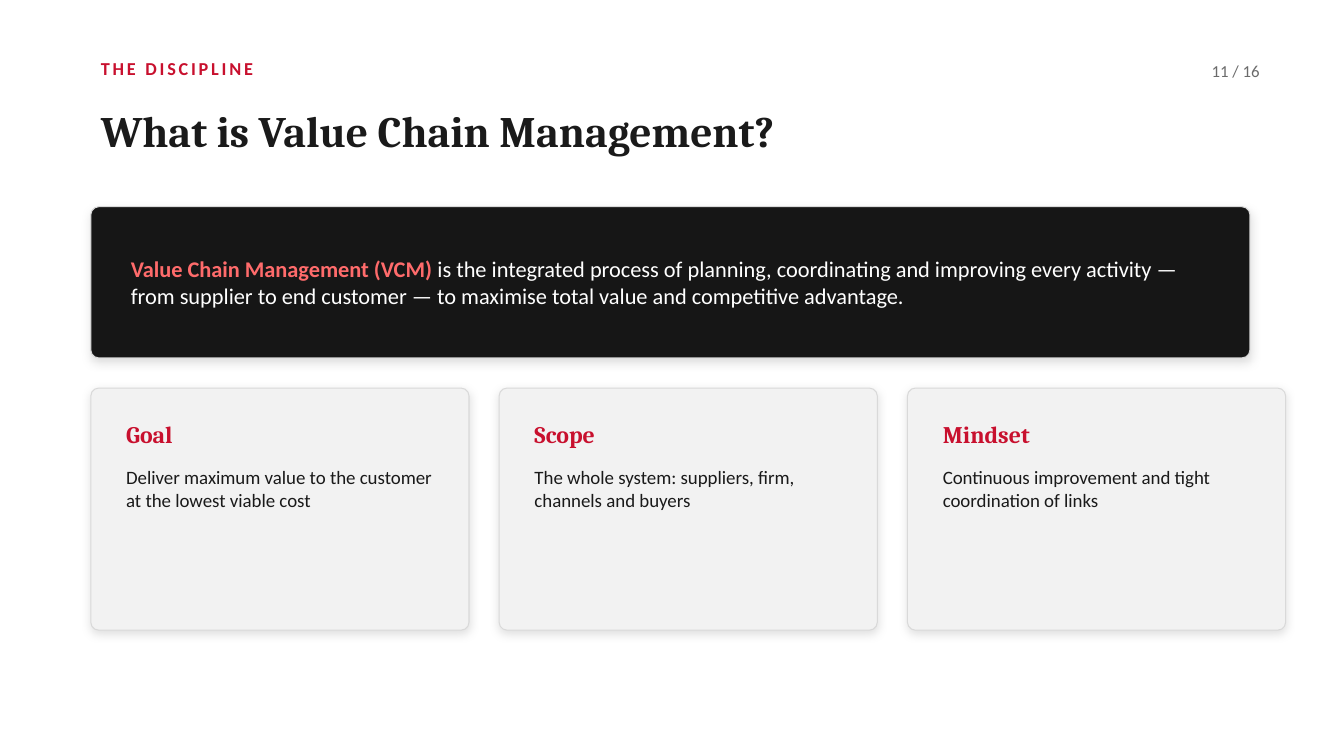
from lxml import etree
from pptx import Presentation
from pptx import util as u
from pptx.dml.color import RGBColor
from pptx.enum import shapes, text
from pptx.oxml import ns

RED = RGBColor(0xC8, 0x10, 0x2E)
CORAL = RGBColor(0xFF, 0x6B, 0x6B)
INK = RGBColor(0x1A, 0x1A, 0x1A)
GREY = RGBColor(0x6B, 0x6B, 0x6B)
BLACK = RGBColor(0x16, 0x16, 0x16)
PALE = RGBColor(0xF2, 0xF2, 0xF2)
BORDER = RGBColor(0xD9, 0xD9, 0xD9)
WHITE = RGBColor(0xFF, 0xFF, 0xFF)
SHADE = RGBColor(0, 0, 0)

MARGIN = 2.29
CARD_TOP = 9.78
CARD_WIDTH = 9.53
CARD_PITCH = 10.29
CARD_INSET = 0.64
CARDS = [
    ("Goal", "Deliver maximum value to the customer at the lowest viable cost"),
    ("Scope", "The whole system: suppliers, firm, channels and buyers"),
    ("Mindset", "Continuous improvement and tight coordination of links"),
]


def set_font(font, name, size, color, bold=False):
    """Apply a typeface, size, colour and weight."""
    font.name = name
    font.size = u.Pt(size)
    font.bold = bold
    font.color.rgb = color


def prepare_frame(box, anchor=text.MSO_ANCHOR.MIDDLE):
    """Set wrapping and anchoring, and return the first paragraph."""
    frame = box.text_frame
    frame.word_wrap = True
    frame.auto_size = text.MSO_AUTO_SIZE.NONE
    frame.vertical_anchor = anchor
    para = frame.paragraphs[0]
    para.alignment = text.PP_ALIGN.LEFT
    return para


def add_text(page, place, words, name, size, color, bold=False,
             anchor=text.MSO_ANCHOR.MIDDLE):
    """Add a one-paragraph text box and return its paragraph."""
    box = page.shapes.add_textbox(*map(u.Cm, place))
    para = prepare_frame(box, anchor)
    para.text = words
    set_font(para.font, name, size, color, bold)
    return para


def add_shadow(shape):
    """Give a shape a soft shadow that falls straight down."""
    shape.shadow.inherit = False
    effects = shape.element.spPr.find(ns.qn("a:effectLst"))
    shadow = etree.SubElement(
        effects, ns.qn("a:outerShdw"), blurRad=str(u.Pt(7)),
        dist=str(u.Pt(2)), dir="5400000", algn="t", rotWithShape="0")
    color = etree.SubElement(shadow, ns.qn("a:srgbClr"), val=str(SHADE))
    etree.SubElement(color, ns.qn("a:alpha"), val="12000")


def add_panel(page, place, fill):
    """Add a rounded panel with a thin border, all with the same corner radius."""
    panel = page.shapes.add_shape(
        shapes.MSO_SHAPE.ROUNDED_RECTANGLE, *map(u.Cm, place))
    panel.adjustments[0] = 0.2 / place[3]
    panel.fill.solid()
    panel.fill.fore_color.rgb = fill
    panel.line.color.rgb = BORDER
    panel.line.width = u.Pt(0.75)
    add_shadow(panel)


def add_header(page):
    """Add the section label, title and page count."""
    label = add_text(page, (MARGIN, 1.22, 22.86, 1.02), "THE DISCIPLINE",
                     "Calibri", 13, RED, True)
    label.runs[0].font._element.set("spc", "200")
    title = page.shapes.title
    title.left, title.top, title.width, title.height = map(
        u.Cm, (MARGIN, 2.08, 29.21, 2.41))
    para = prepare_frame(title)
    para.text = "What is Value Chain Management?"
    set_font(para.font, "Cambria", 31, INK, True)
    count = add_text(page, (29.46, 1.27, 2.54, 1.02), "11 / 16",
                     "Calibri", 12, GREY)
    count.alignment = text.PP_ALIGN.RIGHT


def add_definition(page):
    """Add the dark panel with the definition."""
    add_panel(page, (MARGIN, 5.21, 29.21, 3.81), BLACK)
    para = add_text(page, (3.05, 5.72, 27.94, 2.79),
                    "Value Chain Management (VCM) ", "Calibri", 16, WHITE)
    set_font(para.runs[0].font, "Calibri", 16, CORAL, True)
    span = para.add_run()
    span.text = ("is the integrated process of planning, coordinating and "
                 "improving every activity — from supplier to end customer — "
                 "to maximise total value and competitive advantage.")
    set_font(span.font, "Calibri", 16, WHITE)


def add_card(page, left, heading, words):
    """Add a pale card with a heading and a short text."""
    add_panel(page, (left, CARD_TOP, CARD_WIDTH, 6.1), PALE)
    inner = left + CARD_INSET
    width = CARD_WIDTH - 2 * CARD_INSET
    add_text(page, (inner, CARD_TOP + 0.51, width, 1.27), heading,
             "Cambria", 17, RED, True)
    add_text(page, (inner, CARD_TOP + 1.83, width, 3.81), words,
             "Calibri", 13.5, INK, anchor=text.MSO_ANCHOR.TOP)


def main():
    """Build and save the slide."""
    deck = Presentation()
    deck.slide_width, deck.slide_height = u.Cm(33.87), u.Cm(19.05)
    page = deck.slides.add_slide(deck.slide_layouts.get_by_name("Title Only"))
    page.background.fill.solid()
    page.background.fill.fore_color.rgb = WHITE
    add_header(page)
    add_definition(page)
    for index, (heading, words) in enumerate(CARDS):
        add_card(page, MARGIN + index * CARD_PITCH, heading, words)
    deck.save("out.pptx")


if __name__ == "__main__":
    main()
